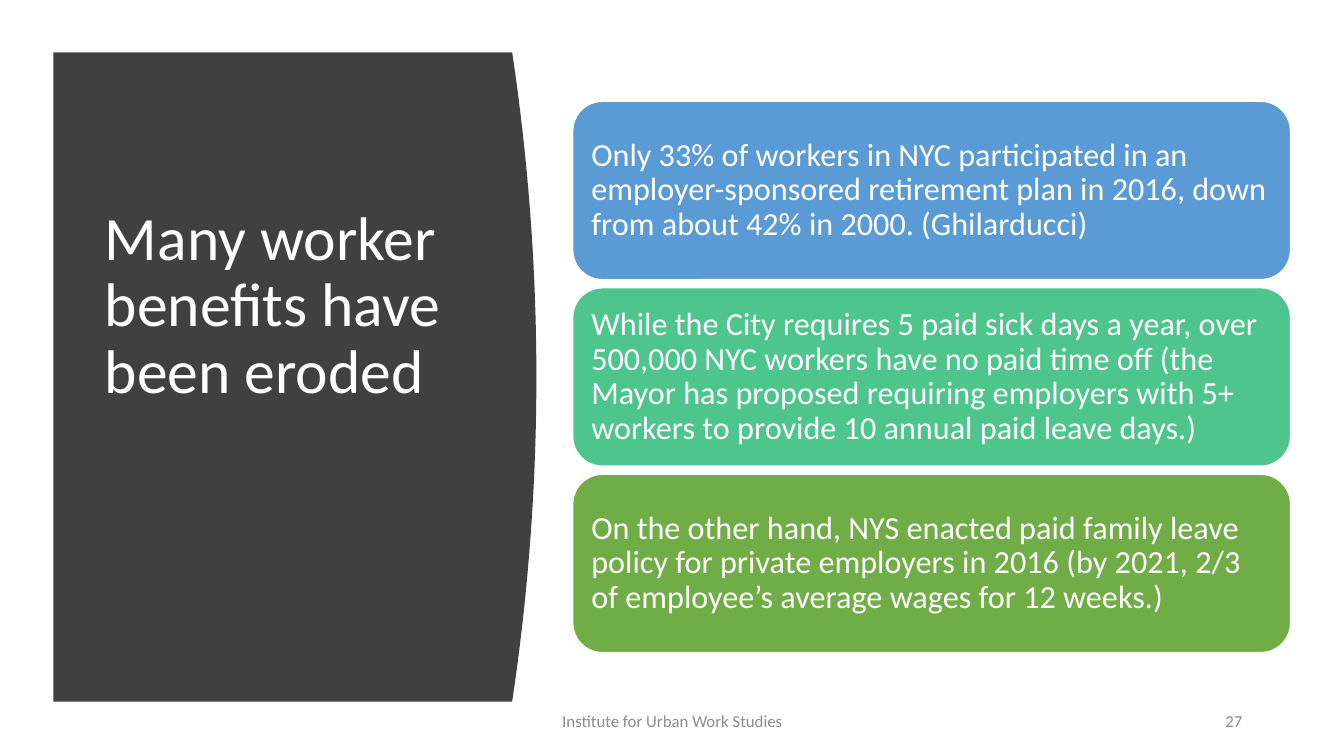
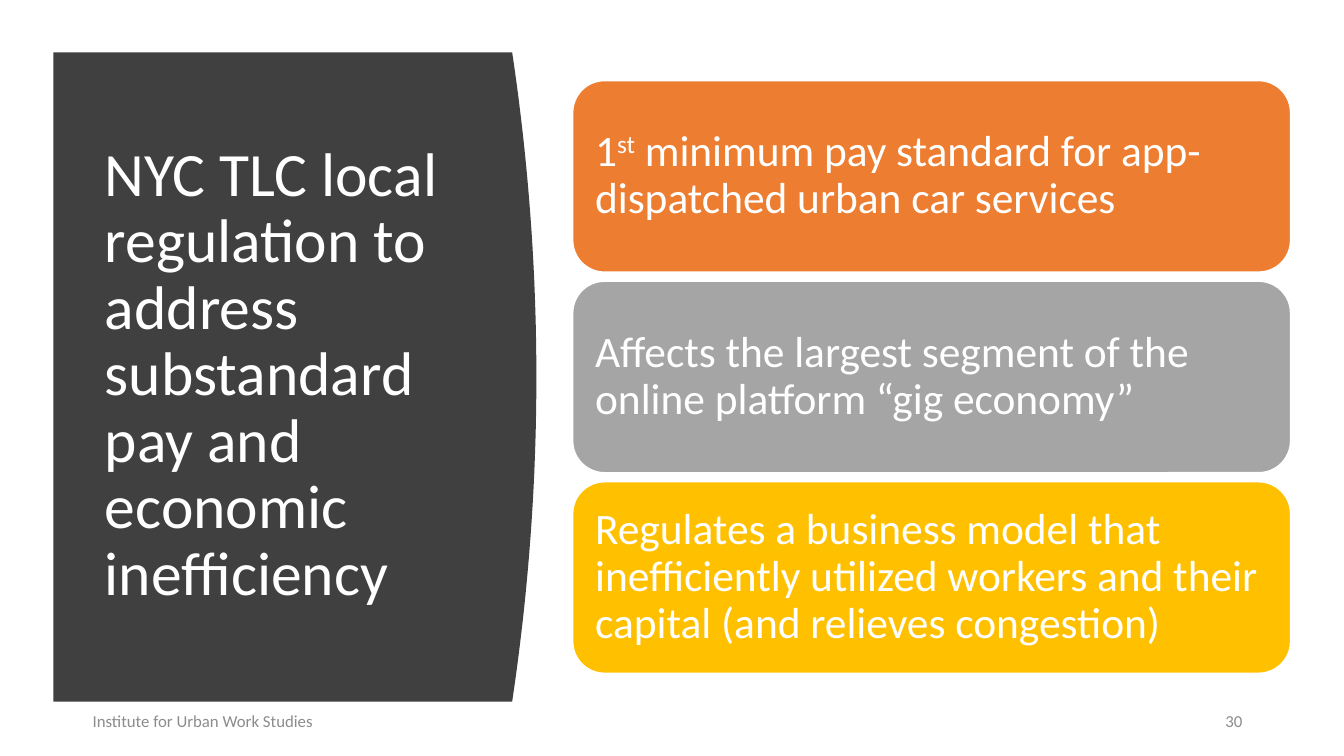
"""Build two slides with a curved title panel and three stacked cards."""
import dataclasses

import pptx
import pptx.dml.color
import pptx.enum.shapes
import pptx.enum.text
import pptx.util

Inches = pptx.util.Inches
Pt = pptx.util.Pt
RGB = pptx.dml.color.RGBColor.from_string
ALIGN = pptx.enum.text.PP_ALIGN
MIDDLE = pptx.enum.text.MSO_ANCHOR.MIDDLE


@dataclasses.dataclass(frozen=True)
class Theme:
    font: str = "Calibri"
    panel: str = "404040"
    white: str = "FFFFFF"
    muted: str = "8C8C8C"
    blue: str = "5B9BD5"
    mint: str = "4DC58D"
    green: str = "70AD47"
    orange: str = "ED7D31"
    grey: str = "A5A5A5"
    gold: str = "FFC000"
    title_size: int = 44
    footer_size: int = 12


theme = Theme()


def write(shape, runs, size, color, align=ALIGN.LEFT, spacing=1.0):
    tf = shape.text_frame
    tf.word_wrap = True
    tf.auto_size = pptx.enum.text.MSO_AUTO_SIZE.NONE
    tf.vertical_anchor = MIDDLE
    p = tf.paragraphs[0]
    p.alignment = align
    p.line_spacing = spacing
    for text, raised in runs:
        r = p.add_run()
        r.text = text
        r.font.name = theme.font
        r.font.size = Pt(size)
        r.font.color.rgb = RGB(color)
        if raised:
            r._r.get_or_add_rPr().set("baseline", "30000")


def paint(shape, fill, line=None):
    shape.shadow.inherit = False
    shape.fill.solid()
    shape.fill.fore_color.rgb = RGB(fill)
    if line:
        shape.line.color.rgb = RGB(line)
        shape.line.width = Pt(1)
    else:
        shape.line.fill.background()


footer = "Institute for Urban Work Studies"
slides = [
    dict(
        title="Many worker benefits have been eroded",
        title_bottom=1.42, number="27",
        footer_left=4.42, footer_align=ALIGN.CENTER,
        card_height=1.77, gap=0.08, inset=0.1, size=23,
        cards=[
            (theme.blue, [("Only 33% of workers in NYC participated in an employer-sponsored "
                           "retirement plan in 2016, down from about 42% in 2000. "
                           "(Ghilarducci)", False)]),
            (theme.mint, [("While the City requires 5 paid sick days a year, over 500,000 NYC "
                           "workers have no paid time off (the Mayor has proposed requiring "
                           "employers with 5+ workers to provide 10 annual paid leave "
                           "days.)", False)]),
            (theme.green, [("On the other hand, NYS enacted paid family leave policy for "
                            "private employers in 2016 (by 2021, 2/3 of employee’s average "
                            "wages for 12 weeks.)", False)]),
        ],
    ),
    dict(
        title="NYC TLC local regulation to address substandard pay and economic inefficiency",
        title_bottom=0.05, number="30",
        footer_left=0.82, footer_align=ALIGN.LEFT,
        card_height=1.9, gap=0.09, inset=0.13, size=31,
        cards=[
            (theme.orange, [("1", False), ("st", True),
                            (" minimum pay standard for app-dispatched urban car services",
                             False)]),
            (theme.grey, [("Affects the largest segment of the online platform “gig economy”",
                           False)]),
            (theme.gold, [("Regulates a business model that inefficiently utilized workers and "
                           "their capital (and relieves congestion)", False)]),
        ],
    ),
]

panel_left, panel_top, panel_bottom = 0.53, 0.52, 6.96
panel_edge, bulge = 5.08, 0.24
middle = (panel_top + panel_bottom) / 2
half = (panel_bottom - panel_top) / 2
steps = 40
curve = []
for i in range(steps + 1):
    t = 2 * i / steps - 1
    curve.append((Inches(panel_edge + bulge * (1 - t * t)), Inches(middle + half * t)))

prs = pptx.Presentation()
prs.slide_width = Inches(13.33)
prs.slide_height = Inches(7.5)

for content in slides:
    s = prs.slides.add_slide(prs.slide_layouts[5])

    title = s.shapes.title
    title.left, title.top = Inches(0.94), Inches(1.11)
    title.width, title.height = Inches(3.74), Inches(5.24)
    title.text_frame.margin_bottom = Inches(content["title_bottom"])
    write(title, [(content["title"], False)], theme.title_size, theme.white, spacing=0.9)

    outline = s.shapes.build_freeform(Inches(panel_left), Inches(panel_top))
    outline.add_line_segments(curve + [(Inches(panel_left), Inches(panel_bottom))], close=True)
    panel = outline.convert_to_shape()
    paint(panel, theme.panel)
    title._element.addprevious(panel._element)

    height, gap = content["card_height"], content["gap"]
    count = len(content["cards"])
    first_top = middle - (count * height + (count - 1) * gap) / 2
    for i, (fill, runs) in enumerate(content["cards"]):
        sp = s.shapes.add_shape(
            pptx.enum.shapes.MSO_SHAPE.ROUNDED_RECTANGLE,
            Inches(5.68), Inches(first_top + i * (height + gap)), Inches(7.12), Inches(height))
        paint(sp, fill, theme.white)
        tf = sp.text_frame
        tf.margin_left = tf.margin_right = Inches(content["inset"])
        tf.margin_top = tf.margin_bottom = Inches(content["inset"])
        write(sp, runs, content["size"], theme.white, spacing=0.9)

    for text, left, width, align in [
        (footer, content["footer_left"], 4.5, content["footer_align"]),
        (content["number"], 11.73, 0.69, ALIGN.RIGHT),
    ]:
        box = s.shapes.add_textbox(Inches(left), Inches(6.95), Inches(width), Inches(0.4))
        write(box, [(text, False)], theme.footer_size, theme.muted, align)

prs.save("out.pptx")
